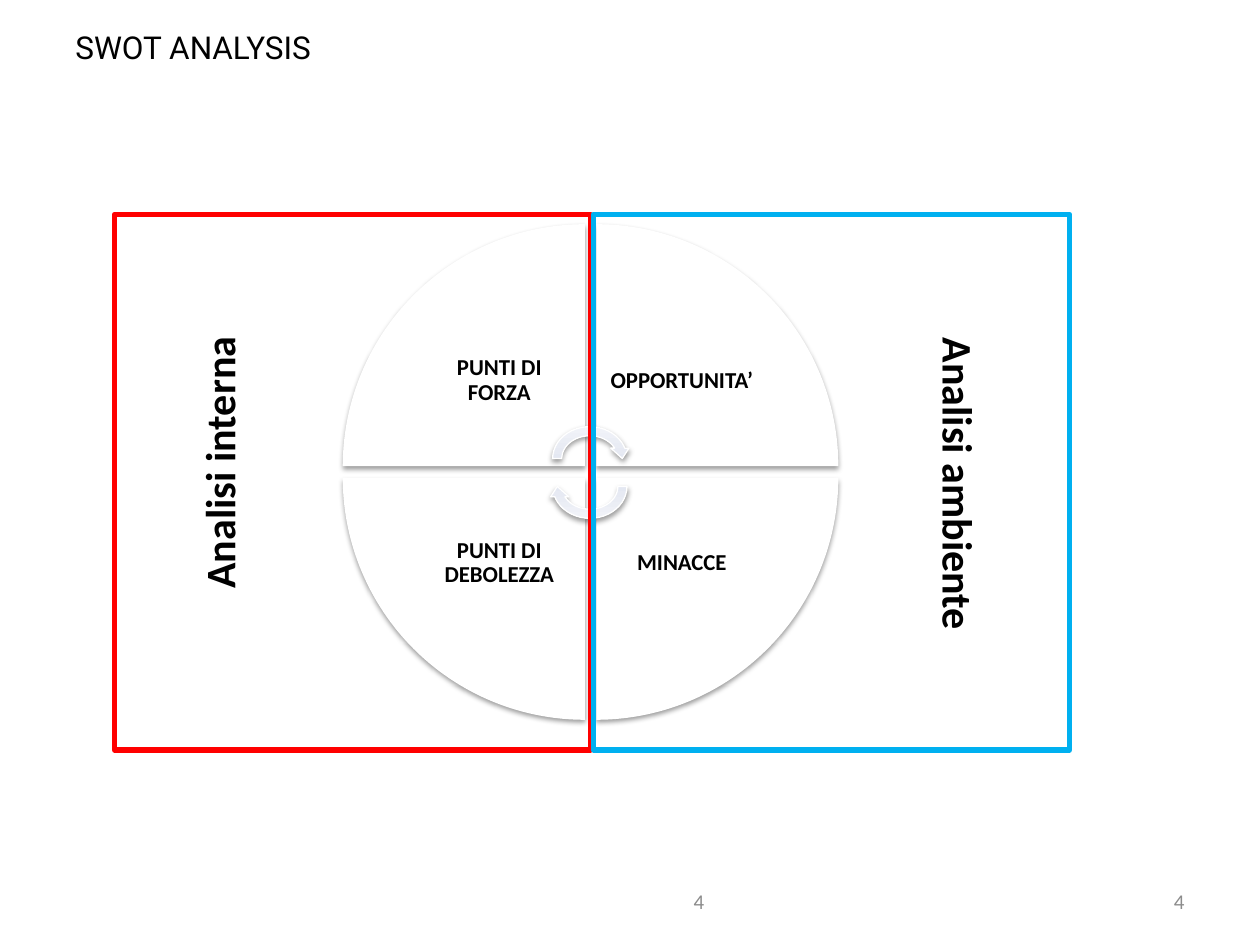
"""Build a SWOT analysis slide: four wedges around a cycle, framed by internal and external analysis."""
from copy import deepcopy
from dataclasses import dataclass

from lxml.etree import SubElement
from pptx import Presentation
from pptx.dml.color import RGBColor
from pptx.enum.shapes import MSO_SHAPE as Preset
from pptx.enum.text import MSO_ANCHOR as Anchor, PP_ALIGN as Align
from pptx.oxml.ns import qn
from pptx.util import Cm, Pt


@dataclass(frozen=True)
class Theme:
    body_font: str = "Calibri"
    title_font: str = "Roboto"
    black: str = "000000"
    white: str = "FFFFFF"
    grey: str = "8C8C8C"
    red: str = "FF0000"
    blue: str = "00B0F0"
    arrow_stops: tuple = ((0, "D3D9E9"), (0.35, "E0E4EF"), (1, "F2F4F9"))
    number_size: int = 12
    wedge_size: int = 13
    title_size: int = 18
    side_size: int = 24


@dataclass(frozen=True)
class Box:
    left: float
    top: float
    width: float
    height: float

    def lengths(self) -> tuple:
        return Cm(self.left), Cm(self.top), Cm(self.width), Cm(self.height)


@dataclass(frozen=True)
class Wedge:
    text: str
    column: int
    row: int
    rotation: int


@dataclass(frozen=True)
class Side:
    text: str
    frame_left: float
    color: str
    label: Box
    rotation: int


THEME = Theme()
WEDGE_LEFT, WEDGE_TOP, WEDGE_SIDE, WEDGE_STEP, WEDGE_TEXT = 6.91, 4.52, 4.88, 5.11, 3.45
WEDGES = (
    Wedge("PUNTI DI FORZA", 0, 0, 0),
    Wedge("OPPORTUNITA’", 1, 0, 90),
    Wedge("MINACCE", 1, 1, 180),
    Wedge("PUNTI DI DEBOLEZZA", 0, 1, 270),
)
SIDES = (
    Side("Analisi interna", 2.31, THEME.red, Box(0.41, 8.69, 8, 1.27), 270),
    Side("Analisi ambiente", 11.96, THEME.blue, Box(15.34, 9.12, 8, 1.27), 90),
)


def add_soft_shadow(effects) -> None:
    shadow = SubElement(effects, qn("a:outerShdw"), blurRad=str(Pt(3.1)),
                        dist=str(Pt(1.6)), dir="5400000", rotWithShape="0")
    color = SubElement(shadow, qn("a:srgbClr"), val=THEME.black)
    SubElement(color, qn("a:alpha"), val="38000")


def add_preset(slide, preset, box: Box, rotation: int = 0, shadowed: bool = True):
    shape = slide.shapes.add_shape(preset, *box.lengths())
    shape.rotation = rotation
    shape.shadow.inherit = False
    if shadowed:
        add_soft_shadow(shape._element.spPr.find(qn("a:effectLst")))
    return shape


def set_line(shape, color: str, width: float) -> None:
    shape.line.color.rgb = RGBColor.from_string(color)
    shape.line.width = Pt(width)


def add_label(slide, text: str, box: Box, size: int, color: str = THEME.black,
              font: str = THEME.body_font, bold: bool = False, align=Align.CENTER,
              anchor=Anchor.MIDDLE, rotation: int = 0):
    text_box = slide.shapes.add_textbox(*box.lengths())
    text_box.rotation = rotation
    frame = text_box.text_frame
    frame.word_wrap = True
    frame.vertical_anchor = anchor
    paragraph = frame.paragraphs[0]
    paragraph.alignment = align
    run = paragraph.add_run()
    run.text = text
    run.font.color.rgb = RGBColor.from_string(color)
    for name, value in {"name": font, "size": Pt(size), "bold": bold}.items():
        setattr(run.font, name, value)
    return text_box


def add_wedge(slide, wedge: Wedge) -> None:
    left = WEDGE_LEFT + wedge.column * WEDGE_STEP
    top = WEDGE_TOP + wedge.row * WEDGE_STEP
    shape = add_preset(slide, Preset.PIE_WEDGE, Box(left, top, WEDGE_SIDE, WEDGE_SIDE), wedge.rotation)
    shape.fill.solid()
    shape.fill.fore_color.rgb = RGBColor.from_string(THEME.white)
    shape.line.fill.background()
    inset = WEDGE_SIDE - WEDGE_TEXT
    text_box = add_label(
        slide, wedge.text,
        Box(left + inset * (1 - wedge.column), top + inset * (1 - wedge.row), WEDGE_TEXT, WEDGE_TEXT),
        THEME.wedge_size, bold=True)
    for margin in ("margin_left", "margin_top", "margin_right", "margin_bottom"):
        setattr(text_box.text_frame, margin, Cm(0.25))
    text_box.text_frame.paragraphs[0].line_spacing = 0.9


def add_cycle_arrow(slide, top: float, rotation: int) -> None:
    shape = add_preset(slide, Preset.CIRCULAR_ARROW, Box(11.05, top, 1.68, 1.47), rotation)
    shape.fill.gradient()
    shape.fill.gradient_angle = 90
    stop_list = next(shape._element.spPr.iter(qn("a:gsLst")))
    stop_list.append(deepcopy(stop_list[0]))
    for stop, (position, color) in zip(shape.fill.gradient_stops, THEME.arrow_stops):
        stop.position = position
        stop.color.rgb = RGBColor.from_string(color)
    set_line(shape, THEME.white, 0.75)


def add_frame(slide, side: Side) -> None:
    shape = add_preset(slide, Preset.RECTANGLE, Box(side.frame_left, 4.32, 9.6, 10.8), shadowed=False)
    shape.fill.background()
    set_line(shape, side.color, 3)


def add_title(slide) -> None:
    title = add_label(slide, "SWOT ANALYSIS", Box(1.27, 0.43, 5.66, 1.02), THEME.title_size,
                      font=THEME.title_font, align=Align.LEFT)
    properties = next(title._element.iter(qn("a:rPr")))
    effects = SubElement(properties, qn("a:effectLst"))
    add_soft_shadow(effects)
    properties.find(qn("a:latin")).addprevious(effects)


def main() -> None:
    presentation = Presentation()
    presentation.slide_width, presentation.slide_height = Cm(25.4), Cm(19.05)
    slide = presentation.slides.add_slide(presentation.slide_layouts[6])
    for left in (18.21, 8.53):
        add_label(slide, "4", Box(left, 17.65, 5.92, 1.02), THEME.number_size,
                  THEME.grey, align=Align.RIGHT)
    for wedge in WEDGES:
        add_wedge(slide, wedge)
    for top, rotation in ((8.51, 0), (9.07, 180)):
        add_cycle_arrow(slide, top, rotation)
    for side in SIDES:
        add_frame(slide, side)
    for side in SIDES:
        add_label(slide, side.text, side.label, THEME.side_size, bold=True,
                  anchor=Anchor.TOP, rotation=side.rotation)
    add_title(slide)
    presentation.save("out.pptx")


if __name__ == "__main__":
    main()
